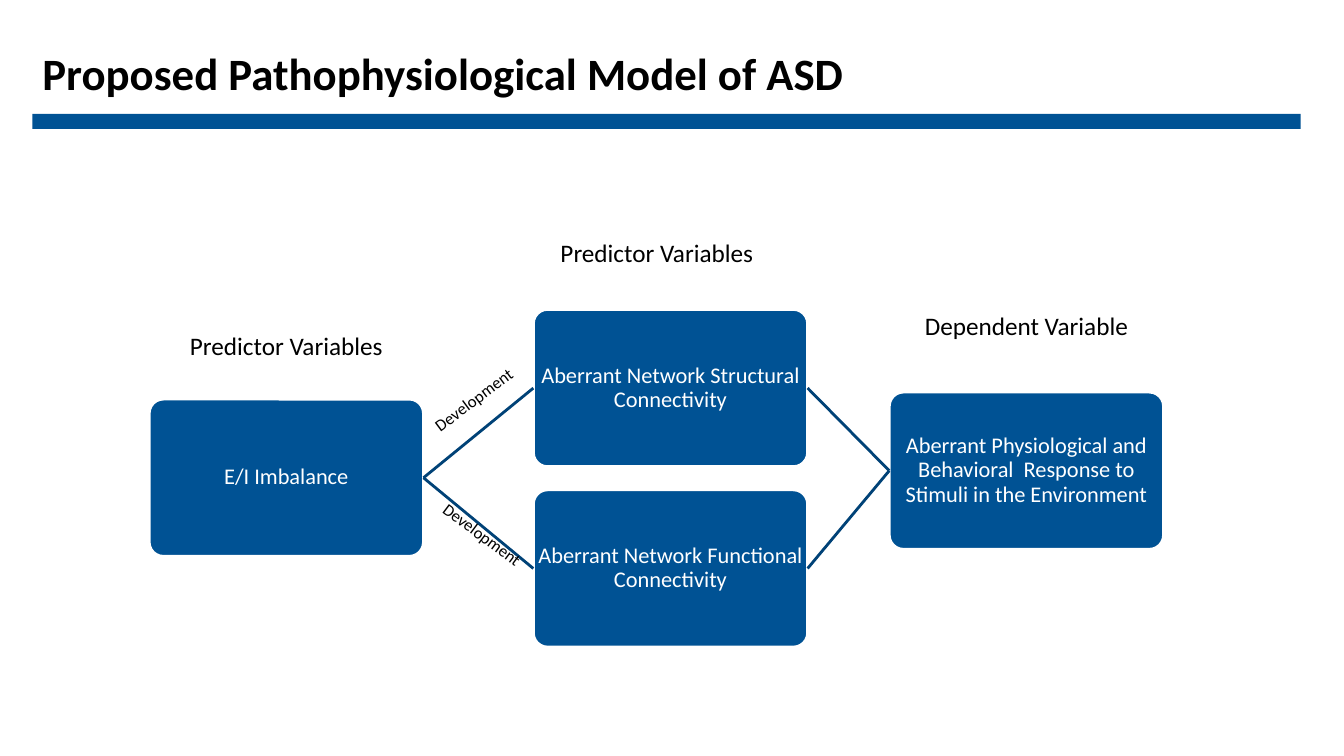
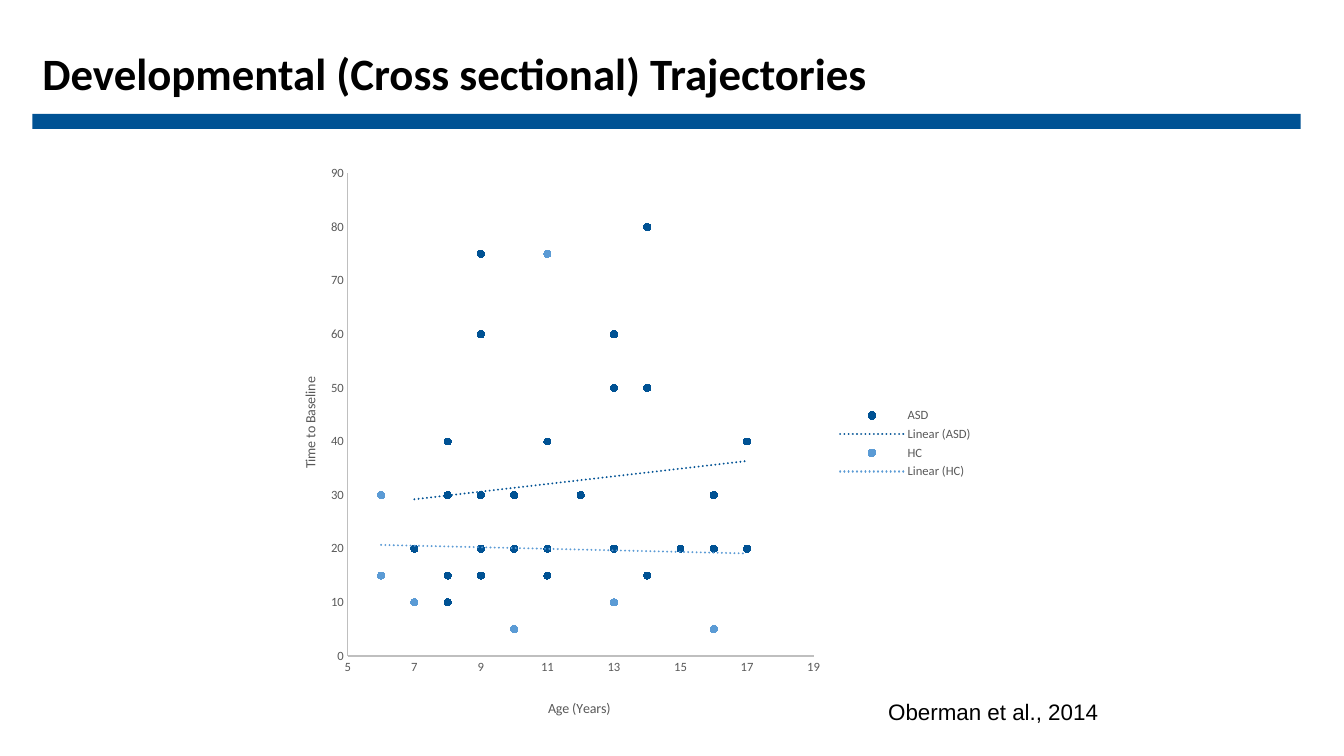
"""Build two slides on a pathophysiological model of ASD and its developmental trajectories."""
import lxml.etree
import pptx
import pptx.chart.data
import pptx.dml.color
import pptx.enum.chart
import pptx.enum.shapes
import pptx.enum.text
import pptx.oxml
import pptx.oxml.ns
import pptx.util

Inches = pptx.util.Inches
Pt = pptx.util.Pt
qn = pptx.oxml.ns.qn
ALIGN = pptx.enum.text.PP_ALIGN
ANCHOR = pptx.enum.text.MSO_ANCHOR

COLORS = {
    "band": "005294",
    "link": "004277",
    "sky": "5B9BD5",
    "axis": "BFBFBF",
    "label": "595959",
    "text": "000000",
    "white": "FFFFFF",
}
FONT = "Calibri"

MODEL_TITLE = "Proposed Pathophysiological Model of ASD"
BOX_WIDTH, BOX_HEIGHT = 2.72, 1.56
BOXES = {
    "imbalance": ("E/I Imbalance", 1.48, 3.96),
    "structural": ("Aberrant Network Structural Connectivity", 5.29, 3.07),
    "functional": ("Aberrant Network Functional Connectivity", 5.29, 4.86),
    "response": (
        "Aberrant Physiological and Behavioral  Response to Stimuli in the Environment",
        8.82, 3.89),
}
LINKS = [
    ("imbalance", "structural"),
    ("imbalance", "functional"),
    ("structural", "response"),
    ("functional", "response"),
]
MODEL_LABELS = [
    ("Development", (3.64, 3.8, 2.19, 0.43), 12, 323.3),
    ("Development", (3.65, 5.14, 2.19, 0.43), 12, 36.8),
    ("Predictor Variables", (5.13, 2.31, 2.77, 0.57), 18, 0),
    ("Predictor Variables", (1.52, 3.23, 2.64, 0.57), 18, 0),
    ("Dependent Variable", (8.52, 3.03, 3.32, 0.57), 18, 0),
]

CHART_TITLE = "Developmental (Cross sectional) Trajectories"
CITATION = "Oberman et al., 2014"
SERIES = [
    ("ASD", "band",
     [7, 8, 8, 8, 8, 9, 9, 9, 9, 9, 10, 10, 10, 11, 11, 11, 11, 11, 12, 13, 13, 13,
      13, 13, 14, 14, 14, 15, 16, 16, 17, 17, 17],
     [20, 40, 15, 10, 30, 20, 60, 30, 15, 75, 20, 30, 30, 20, 40, 40, 20, 15, 30, 60,
      50, 50, 20, 20, 50, 80, 15, 20, 20, 30, 20, 40, 40]),
    ("HC", "sky",
     [6, 6, 7, 7, 10, 11, 13, 16, 16, 17],
     [30, 15, 10, 10, 5, 75, 10, 5, 20, 20]),
]
AGE_AXIS = ("Age (Years)", 5, 19, 2, (0.38, 0.94))
TIME_AXIS = ("Time to Baseline", 0, 90, 10, (0.03, 0.38))


def rgb(name):
    return pptx.dml.color.RGBColor.from_string(COLORS[name])


def style_font(font, size, color="text", name=FONT, bold=False):
    font.name, font.size, font.bold = name, Pt(size), bold
    font.color.rgb = rgb(color)


def style_line(line, color, width):
    line.color.rgb = rgb(color)
    line.width = Pt(width)


def write(shape, text, size, color="text", name=FONT, bold=False, align=ALIGN.CENTER):
    frame = shape.text_frame
    frame.word_wrap = True
    frame.auto_size = pptx.enum.text.MSO_AUTO_SIZE.NONE
    frame.text = text
    paragraph = frame.paragraphs[0]
    paragraph.alignment = align
    style_font(paragraph.font, size, color, name, bold)
    return frame


def add_shape(slide, preset, area, fill):
    shape = slide.shapes.add_shape(preset, *map(Inches, area))
    shape.shadow.inherit = False
    shape.fill.solid()
    shape.fill.fore_color.rgb = rgb(fill)
    return shape


def add_label(slide, text, area, size, rotation=0, **style):
    label = slide.shapes.add_textbox(*map(Inches, area))
    label.rotation = rotation
    write(label, text, size, **style)


def add_titled_slide(presentation, text):
    slide = presentation.slides.add_slide(presentation.slide_layouts[5])
    title = slide.shapes.title
    title.left, title.top, title.width, title.height = map(Inches, (0.32, 0.32, 12.58, 0.81))
    frame = write(title, text, 32, bold=True, align=ALIGN.LEFT)
    frame.vertical_anchor = ANCHOR.MIDDLE
    return slide


def add_band_to_layout(slide):
    band = add_shape(slide, pptx.enum.shapes.MSO_SHAPE.RECTANGLE,
                     (0.32, 1.13, 12.58, 0.15), "band")
    band.line.fill.background()
    slide.slide_layout.shapes.element.append(band.element)


def add_box(slide, text, left, top):
    box = add_shape(slide, pptx.enum.shapes.MSO_SHAPE.ROUNDED_RECTANGLE,
                    (left, top, BOX_WIDTH, BOX_HEIGHT), "band")
    box.adjustments[0] = 0.09
    style_line(box.line, "white", 2)
    frame = write(box, text, 16, "white")
    frame.margin_left = frame.margin_right = frame.margin_top = frame.margin_bottom = 0
    frame.vertical_anchor = ANCHOR.MIDDLE
    frame.paragraphs[0].line_spacing = 0.9
    return box


def add_link(slide, source, target):
    link = slide.shapes.add_connector(pptx.enum.shapes.MSO_CONNECTOR.STRAIGHT, 0, 0, 0, 0)
    link.begin_connect(source, 3)
    link.end_connect(target, 1)
    style_line(link.line, "link", 2)
    lxml.etree.SubElement(link.element.spPr, qn("a:effectLst"))


def set_layout(element, index, **values):
    for old_layout in element.findall(qn("c:layout")):
        element.remove(old_layout)
    layout = pptx.oxml.parse_xml(f'<c:layout {pptx.oxml.ns.nsdecls("c")}/>')
    manual = lxml.etree.SubElement(layout, qn("c:manualLayout"))
    for tag, value in values.items():
        lxml.etree.SubElement(manual, qn(f"c:{tag}")).set("val", str(value))
    element.insert(index, layout)


def format_axis(axis, text, low, high, step, position):
    axis.minimum_scale, axis.maximum_scale, axis.major_unit = low, high, step
    axis.has_major_gridlines = False
    axis.major_tick_mark = axis.minor_tick_mark = pptx.enum.chart.XL_TICK_MARK.NONE
    axis.tick_labels.number_format = "General"
    axis.tick_labels.number_format_is_linked = False
    style_font(axis.tick_labels.font, 9, "label")
    style_line(axis.format.line, "axis", 0.75)
    frame = axis.axis_title.text_frame
    frame.text = text
    style_font(frame.paragraphs[0].font, 10, "label")
    left, top = position
    title = frame.paragraphs[0].font and axis_title_element(axis)
    set_layout(title, 1, xMode="edge", yMode="edge", x=left, y=top)


def axis_title_element(axis):
    rich_text = axis.axis_title.text_frame.paragraphs[0].add_run
    return rich_text and axis.axis_title.element


def add_trendline(series_element, color):
    trendline = pptx.oxml.parse_xml(
        f'<c:trendline {pptx.oxml.ns.nsdecls("c", "a")}><c:spPr><a:ln w="{Pt(1.5)}" cap="rnd">'
        f'<a:solidFill><a:srgbClr val="{COLORS[color]}"/></a:solidFill>'
        '<a:prstDash val="sysDot"/></a:ln></c:spPr><c:trendlineType val="linear"/>'
        '<c:dispRSqr val="0"/><c:dispEq val="0"/></c:trendline>')
    series_element.find(qn("c:xVal")).addprevious(trendline)


def format_series(series, color):
    series.format.line.fill.background()
    marker = series.marker
    marker.style = pptx.enum.chart.XL_MARKER_STYLE.CIRCLE
    marker.size = 5
    marker.format.fill.solid()
    marker.format.fill.fore_color.rgb = rgb(color)
    style_line(marker.format.line, color, 0.75)


def add_scatter(slide):
    data = pptx.chart.data.XyChartData()
    for name, _, ages, times in SERIES:
        points = data.add_series(name)
        for age, time in zip(ages, times):
            points.add_data_point(age, time)
    chart = slide.shapes.add_chart(pptx.enum.chart.XL_CHART_TYPE.XY_SCATTER,
                                   *map(Inches, (2.75, 1.55, 7, 5.7)), data).chart
    chart.has_title = False
    style_font(chart.font, 10)
    chart.has_legend = True
    chart.legend.position = pptx.enum.chart.XL_LEGEND_POSITION.RIGHT
    chart.legend.include_in_layout = False
    style_font(chart.legend.font, 9, "label")
    format_axis(chart.category_axis, *AGE_AXIS)
    format_axis(chart.value_axis, *TIME_AXIS)
    body = chart.value_axis.axis_title.element.xpath(".//a:bodyPr")[0]
    body.set("rot", "-5400000")
    body.set("vert", "horz")
    plot = chart.plots[0]
    plot.vary_by_categories = False
    plot_area = chart.element.xpath("c:chart/c:plotArea")[0]
    series_elements = plot_area.xpath(".//c:ser")
    for series, element, (_, color, _, _) in zip(plot.series, series_elements, SERIES):
        format_series(series, color)
        add_trendline(element, color)
    set_layout(plot_area, 0, layoutTarget="inner",
               xMode="edge", yMode="edge", x=0.1, y=0.03, w=0.66, h=0.84)


def build_model(presentation):
    slide = add_titled_slide(presentation, MODEL_TITLE)
    add_band_to_layout(slide)
    boxes = {key: add_box(slide, *box) for key, box in BOXES.items()}
    for source, target in LINKS:
        add_link(slide, boxes[source], boxes[target])
    for label in MODEL_LABELS:
        add_label(slide, *label)


def build_trajectories(presentation):
    slide = add_titled_slide(presentation, CHART_TITLE)
    add_label(slide, CITATION, (5.94, 6.88, 5.05, 0.37), 16, name="Arial", align=ALIGN.RIGHT)
    add_scatter(slide)


def main():
    presentation = pptx.Presentation()
    presentation.slide_width, presentation.slide_height = Inches(13.33), Inches(7.5)
    build_model(presentation)
    build_trajectories(presentation)
    presentation.save("out.pptx")


if __name__ == "__main__":
    main()
